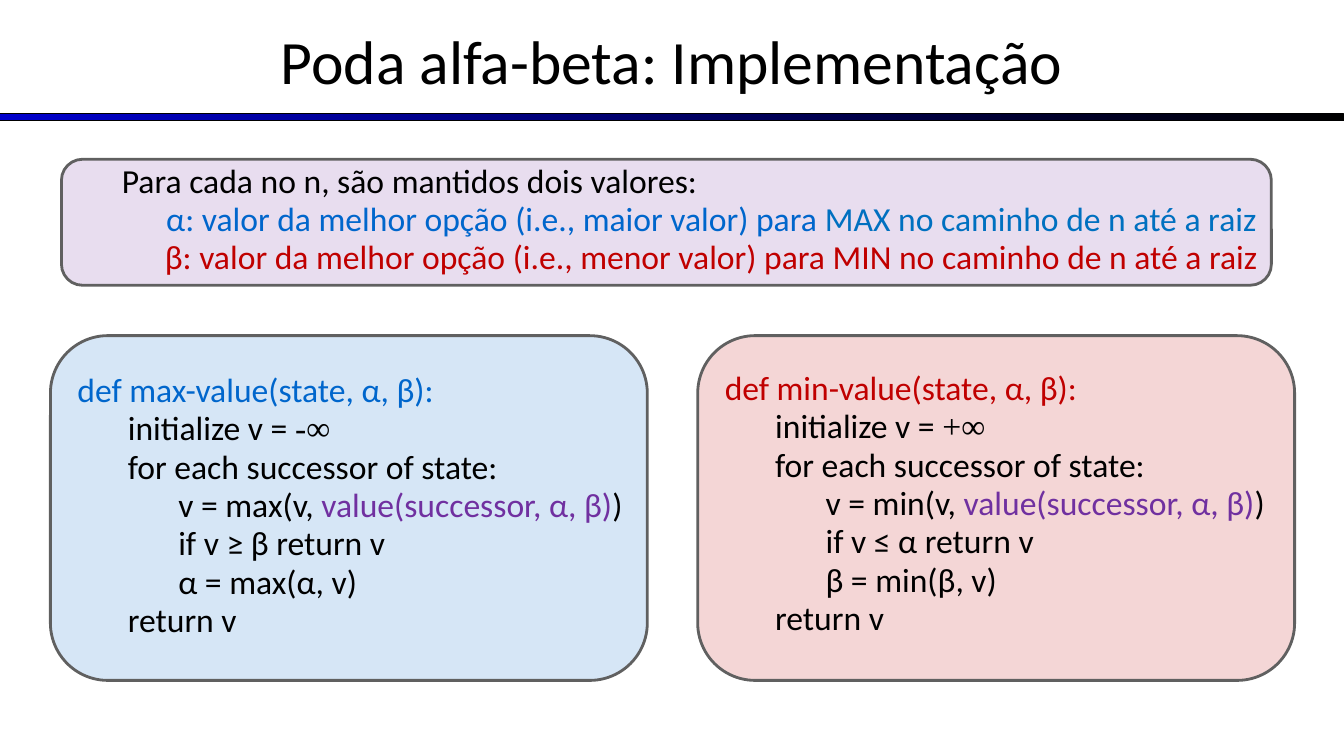
from lxml import etree
from pptx import Presentation
from pptx.dml.color import RGBColor
from pptx.enum.shapes import MSO_SHAPE
from pptx.enum.text import MSO_ANCHOR, PP_ALIGN
from pptx.oxml.ns import qn
from pptx.util import Inches, Pt

RECT, ROUND = MSO_SHAPE.RECTANGLE, MSO_SHAPE.ROUNDED_RECTANGLE
LEFT, CENTER = PP_ALIGN.LEFT, PP_ALIGN.CENTER
TOP, MIDDLE = MSO_ANCHOR.TOP, MSO_ANCHOR.MIDDLE
BLACK, GRAY, NAVY = "000000", "606060", "0000CC"
BLUE, SKY, RED, PURPLE = "0066CC", "0070C0", "C00000", "7030A0"
SANS, SERIF = "Calibri", "Times New Roman"


def rgb(code):
    return RGBColor.from_string(code)


class Board:
    """Draws the elements of one slide in a shared style."""

    def __init__(self, slide):
        self.shapes = slide.shapes

    def shape(self, kind, box, edge, width):
        item = self.shapes.add_shape(kind, *map(Inches, box))
        item.shadow.inherit = False
        item.line.color.rgb = rgb(edge)
        item.line.width = Pt(width)
        return item

    def rule(self, box, start, end):
        """Add a bar whose fill fades from left to right."""
        fill = self.shape(RECT, box, BLACK, 0.75).fill
        fill.gradient()
        fill.gradient_angle = 0
        for stop, code, place in zip(fill.gradient_stops, (start, end), (0, 1)):
            stop.color.rgb = rgb(code)
            stop.position = place

    def panel(self, box, code):
        """Add a rounded box with a pale, see-through fill."""
        item = self.shape(ROUND, box, GRAY, 2)
        item.fill.solid()
        item.fill.fore_color.rgb = rgb(code)
        tint = item.fill._xPr.find(".//" + qn("a:srgbClr"))
        etree.SubElement(tint, qn("a:alpha")).set("val", "16000")

    def text(self, box, lines, size=24, anchor=TOP, space=0.8):
        """Each line is (indent in inches, alignment, runs of (text, colour, font))."""
        frame = self.shapes.add_textbox(*map(Inches, box)).text_frame
        frame.word_wrap = True
        frame.vertical_anchor = anchor
        frame.text = "\n".join([""] * len(lines))
        for para, (indent, align, runs) in zip(frame.paragraphs, lines):
            para.alignment = align
            para.line_spacing = space
            para.space_before = Pt(0.18 * size)
            para._p.get_or_add_pPr().set("marL", str(Inches(indent)))
            for words, code, font in runs:
                run = para.add_run()
                run.text = words
                run.font.size = Pt(size)
                run.font.name = font
                run.font.color.rgb = rgb(code)

    def code(self, left, top, color, name, start, test, bound):
        """Add the panel and pseudocode of one search function."""
        self.panel((left, 3.33, 5.92, 3.42), color)
        rows = [
            (0, [(f"def {name}-value(state, α, β):", color, SANS)]),
            (1, [("initialize v = ", BLACK, SANS), (start, BLACK, SERIF)]),
            (1, [("for each successor of state:", BLACK, SANS)]),
            (2, [(f"v = {name}(v, ", BLACK, SANS),
                 ("value(successor, α, β)", PURPLE, SANS),
                 (")", BLACK, SANS)]),
            (2, [(f"if v {test} return v", BLACK, SANS)]),
            (2, [(f"{bound} = {name}({bound}, v)", BLACK, SANS)]),
            (1, [("return v", BLACK, SANS)]),
        ]
        lines = [(level * 0.5, LEFT, runs) for level, runs in rows]
        self.text((left + 0.17, top, 5.83, 2.9), lines)


def main():
    deck = Presentation()
    deck.slide_width, deck.slide_height = Inches(13.33), Inches(7.5)
    board = Board(deck.slides.add_slide(deck.slide_layouts[6]))

    board.rule((0, 1.13, 13.33, 0.07), NAVY, BLACK)
    title = [(0, CENTER, [("Poda alfa-beta: Implementação", BLACK, SANS)])]
    board.text((0, -0.03, 13.33, 1.25), title, 44, MIDDLE, 1)

    board.panel((0.61, 1.58, 12, 1.25), PURPLE)
    board.text((0.61, 1.61, 12.08, 1.21), [
        (0.5, LEFT, [("Para cada no n, são mantidos dois valores:", BLACK, SANS)]),
        (0.81, CENTER, [
            ("α: valor da melhor opção (i.e., maior valor) para ", BLUE, SANS),
            ("MAX no caminho de n até a raiz", SKY, SANS)]),
        (0.81, CENTER, [
            ("β: valor da melhor opção (i.e., menor valor) para MIN "
             "no caminho de n até a raiz", RED, SANS)]),
    ])

    board.code(0.5, 3.69, BLUE, "max", "-∞", "≥ β", "α")
    board.code(6.92, 3.67, RED, "min", "+∞", "≤ α", "β")
    deck.save("out.pptx")


if __name__ == "__main__":
    main()
